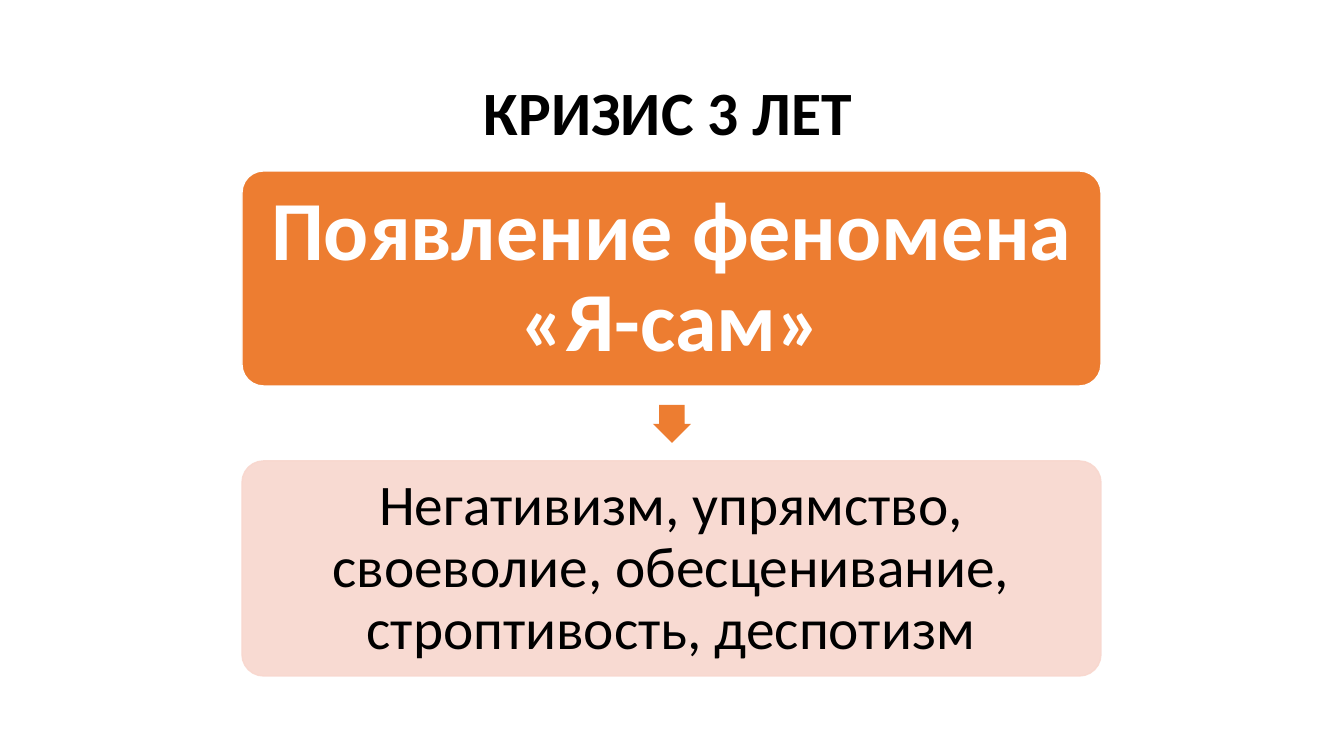
import dataclasses
import pptx
import pptx.util
import pptx.dml.color
import pptx.enum.shapes
import pptx.enum.text
import pptx.oxml

PX = 9071.43
SHAPE = pptx.enum.shapes.MSO_SHAPE


@dataclasses.dataclass(frozen=True)
class Theme:
    font: str = "Calibri"
    ink: str = "000000"
    white: str = "FFFFFF"
    accent: str = "ED7D31"
    tint: str = "F8D7CE"
    title_size: int = 44
    lead_size: int = 60
    detail_size: int = 41


THEME = Theme()


def px(n):
    return pptx.util.Emu(round(n * PX))


def rgb(value):
    return pptx.dml.color.RGBColor.from_string(value)


def write(s, text, size, color, bold=False, inset=10, spacing=1.0, wrap=True,
          anchor=pptx.enum.text.MSO_ANCHOR.MIDDLE):
    tf = s.text_frame
    tf.auto_size = pptx.enum.text.MSO_AUTO_SIZE.NONE
    tf.word_wrap = wrap
    tf.vertical_anchor = anchor
    tf.margin_left = tf.margin_right = px(inset)
    tf.margin_top = tf.margin_bottom = px(inset)
    p = tf.paragraphs[0]
    p.alignment = pptx.enum.text.PP_ALIGN.CENTER
    p.line_spacing = spacing
    r = p.add_run()
    r.text = text
    r.font.name = THEME.font
    r.font.size = pptx.util.Pt(size)
    r.font.bold = bold
    r.font.color.rgb = rgb(color)


def add_title(sl, text, x, y, w, h):
    s = sl.shapes.title
    s.left, s.top, s.width, s.height = px(x), px(y), px(w), px(h)
    write(s, text, THEME.title_size, THEME.ink, bold=True, inset=5, wrap=False,
          anchor=pptx.enum.text.MSO_ANCHOR.TOP)


def add_filled(sl, kind, x, y, w, h, fill, adjustments):
    s = sl.shapes.add_shape(kind, px(x), px(y), px(w), px(h))
    s.shadow.inherit = False
    s.fill.solid()
    s.fill.fore_color.rgb = rgb(fill)
    s.line.fill.background()
    for i, value in enumerate(adjustments):
        s.adjustments[i] = value
    return s


def add_card(sl, y, fill, line, opacity=100):
    s = add_filled(sl, SHAPE.ROUNDED_RECTANGLE, 242, y, 859, 215, fill, [0.1])
    s.line.color.rgb = rgb(line)
    s.line.width = pptx.util.Pt(1)
    if opacity < 100:
        for color in s._element.spPr.iter(pptx.oxml.ns.qn("a:srgbClr")):
            alpha = pptx.oxml.parse_xml(
                f'<a:alpha {pptx.oxml.ns.nsdecls("a")} val="{opacity * 1000}"/>')
            color.append(alpha)
    return s


def main():
    prs = pptx.Presentation()
    prs.slide_width, prs.slide_height = px(1344), px(756)
    sl = prs.slides.add_slide(prs.slide_layouts[5])

    add_title(sl, "КРИЗИС 3 ЛЕТ", 450, 69, 436, 85)
    lead = add_card(sl, 171, THEME.accent, THEME.white)
    write(lead, "Появление феномена «Я-сам»", THEME.lead_size, THEME.white,
          bold=True, inset=8, spacing=0.9)
    add_filled(sl, SHAPE.DOWN_ARROW, 653, 405, 38, 38, THEME.accent, [0.67, 0.5])
    detail = add_card(sl, 461, THEME.tint, THEME.tint, opacity=90)
    write(detail, "Негативизм, упрямство, своеволие, обесценивание, "
          "строптивость, деспотизм", THEME.detail_size, THEME.ink,
          inset=6, spacing=0.9)

    prs.save("out.pptx")


if __name__ == "__main__":
    main()
